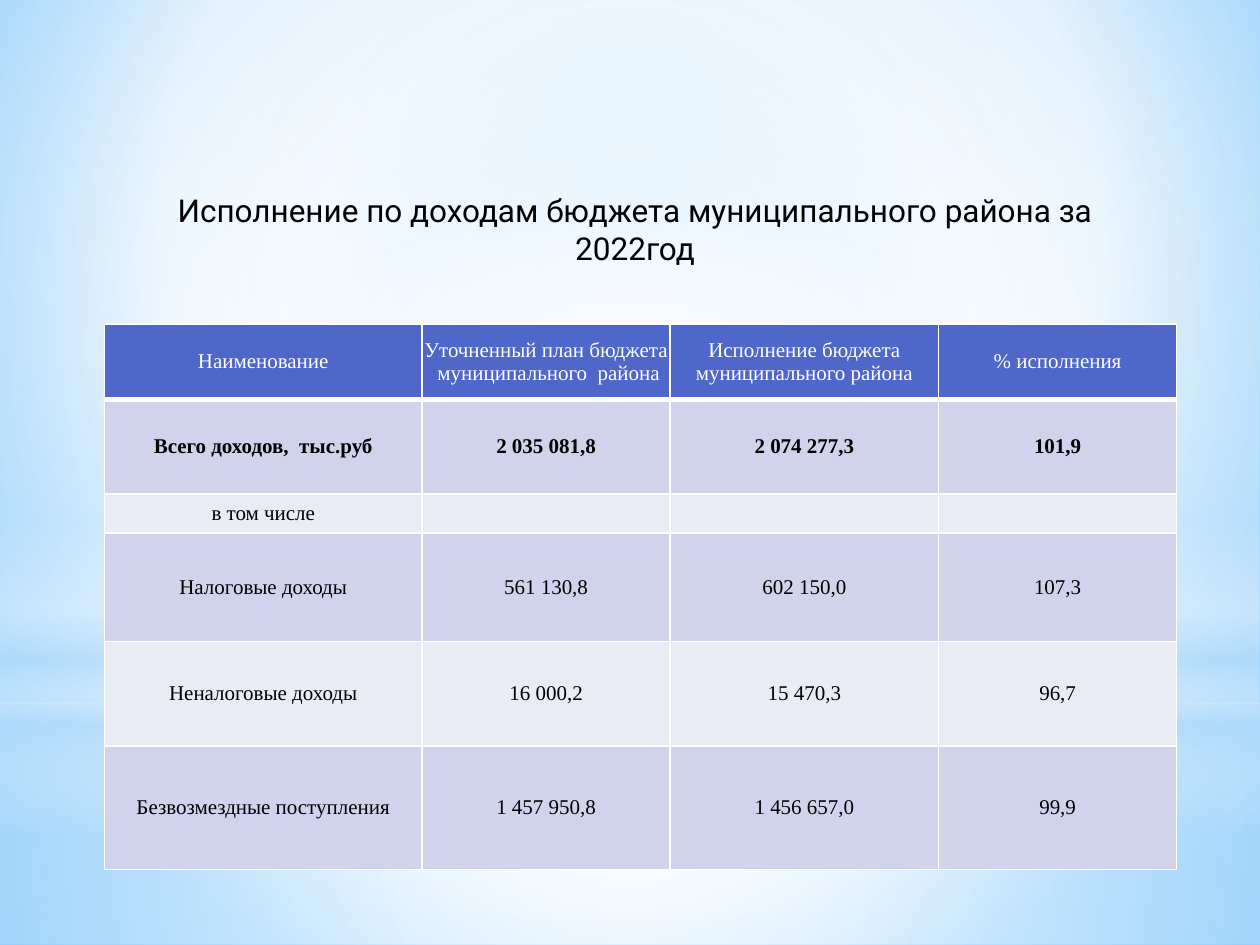
from lxml.etree import SubElement
from pptx import Presentation
from pptx.dml.color import RGBColor
from pptx.enum.shapes import MSO_SHAPE as Shape
from pptx.enum.text import MSO_ANCHOR as Anchor, PP_ALIGN as Align
from pptx.oxml.ns import qn
from pptx.util import Inches, Pt

TITLE = "Исполнение по доходам бюджета муниципального района за 2022год"
ROWS = [
    ("Наименование", "Уточненный план бюджета  муниципального  района",
     "Исполнение бюджета муниципального района", "% исполнения"),
    ("Всего доходов,  тыс.руб", "2 035 081,8", "2 074 277,3", "101,9"),
    ("в том числе", "", "", ""),
    ("Налоговые доходы", "561 130,8", "602 150,0", "107,3"),
    ("Неналоговые доходы", "16 000,2", "15 470,3", "96,7"),
    ("Безвозмездные поступления", "1 457 950,8", "1 456 657,0", "99,9"),
]
COLUMN_WIDTHS = [2.52, 1.97, 2.13, 1.89]
ROW_HEIGHTS = [0.6, 0.75, 0.31, 0.86, 0.83, 0.98]
HEADER_FILL, BAND_FILLS = "4E67C8", ("E9EBF5", "D0D3EB")
TIGHT_MARGINS = {"margin_left": 0.01, "margin_top": 0.01,
                 "margin_right": 0.01, "margin_bottom": 0}

# Gradient stops: position %, colour, opacity %; focus: left, top, right, bottom %
CENTRE = (50, 50, 50, 50)
BACKDROP = [(0, "9ED5FF", 100), (60, "FFFFFF", 100), (100, "5BB9FF", 100)]
GLOWS = [  # shape, box, stops, focus (None for a vertical gradient)
    (Shape.RECTANGLE, (0, 5.58, 10, 1.92),
     [(0, "FFFFFF", 91), (37, "FFFFFF", 76), (100, "B4DCFA", 79)], CENTRE),
    (Shape.RECTANGLE, (0, 0, 10, 5.58),
     [(0, "FFFFFF", 89), (48, "FFFFFF", 62), (100, "B4DCFA", 79)], CENTRE),
    (Shape.RECTANGLE, (0, 4.12, 10, 2.5),
     [(0, "FFFFFF", 0), (29, "FFFFFF", 30), (45, "B4DCFA", 40),
      (55, "FFFFFF", 26), (65, "B4DCFA", 60), (100, "FFFFFF", 0)], None),
    (Shape.OVAL, (0, 1.75, 10, 5.58),
     [(0, "FFFFFF", 100), (56, "FFFFFF", 0)], CENTRE),
]


def color(value):
    return RGBColor.from_string(value)


def add(parent, tag, **attributes):
    return SubElement(parent, qn(tag), {k: str(v) for k, v in attributes.items()})


def set_gradient(fill, owner, stops, focus):
    fill.gradient()
    gradient = owner.find(".//" + qn("a:gradFill"))
    for child in list(gradient):
        gradient.remove(child)
    stop_list = add(gradient, "a:gsLst")
    for position, value, opacity in stops:
        stop = add(stop_list, "a:gs", pos=position * 1000)
        add(add(stop, "a:srgbClr", val=value), "a:alpha", val=opacity * 1000)
    if focus:
        circle = add(gradient, "a:path", path="circle")
        add(circle, "a:fillToRect", **{side: v * 1000 for side, v in zip("ltrb", focus)})
    else:
        add(gradient, "a:lin", ang=90 * 60000, scaled=0)


def write(paragraph, text, **font_values):
    paragraph.alignment = Align.CENTER
    run = paragraph.add_run()
    run.text = text
    font_color = font_values.pop("color")
    for name, value in font_values.items():
        setattr(run.font, name, value)
    run.font.color.rgb = color(font_color)


def set_borders(cell, widths):
    properties = cell._tc.get_or_add_tcPr()
    for index, (side, width) in enumerate(zip("LRTB", widths)):
        line = properties.makeelement(qn(f"a:ln{side}"), {"w": str(Pt(width))})
        add(add(line, "a:solidFill"), "a:srgbClr", val="FFFFFF")
        properties.insert(index, line)


prs = Presentation()
prs.slide_width, prs.slide_height = Inches(10), Inches(7.5)
slide = prs.slides.add_slide(prs.slide_layouts[6])

# Background and its glows
set_gradient(slide.background.fill, slide._element, BACKDROP, (20, 10, 20, 60))
for kind, box, stops, focus in GLOWS:
    glow = slide.shapes.add_shape(kind, *map(Inches, box))
    glow.shadow.inherit = False
    glow.line.fill.background()
    set_gradient(glow.fill, glow._element.spPr, stops, focus)

# Title
title = slide.shapes.add_textbox(*map(Inches, (1.3, 1.47, 7.48, 0.71))).text_frame
title.word_wrap = True
write(title.paragraphs[0], TITLE, size=Pt(18), name="Roboto", color="000000")

# Budget table
budget = slide.shapes.add_table(
    len(ROWS), len(COLUMN_WIDTHS), Inches(0.83), Inches(2.57),
    Inches(sum(COLUMN_WIDTHS)), Inches(sum(ROW_HEIGHTS))).table
for column, width in zip(budget.columns, COLUMN_WIDTHS):
    column.width = Inches(width)
for row, height in zip(budget.rows, ROW_HEIGHTS):
    row.height = Inches(height)

for r, texts in enumerate(ROWS):
    header = r == 0
    for c, text in enumerate(texts):
        cell = budget.cell(r, c)
        cell.vertical_anchor = Anchor.MIDDLE
        cell.fill.solid()
        cell.fill.fore_color.rgb = color(HEADER_FILL if header else BAND_FILLS[r % 2])
        set_borders(cell, (1, 1, 3 if r == 1 else 1, 3 if header else 1))
        if header and c in (1, 2):
            for margin, value in TIGHT_MARGINS.items():
                setattr(cell, margin, Inches(value))
        paragraph = cell.text_frame.paragraphs[0]
        if text:
            write(paragraph, text, size=Pt(12), name="Times New Roman", bold=r == 1,
                  color="FFFFFF" if header else "000000")
        else:
            add(paragraph._p, "a:endParaRPr", sz=1200)

prs.save("out.pptx")
